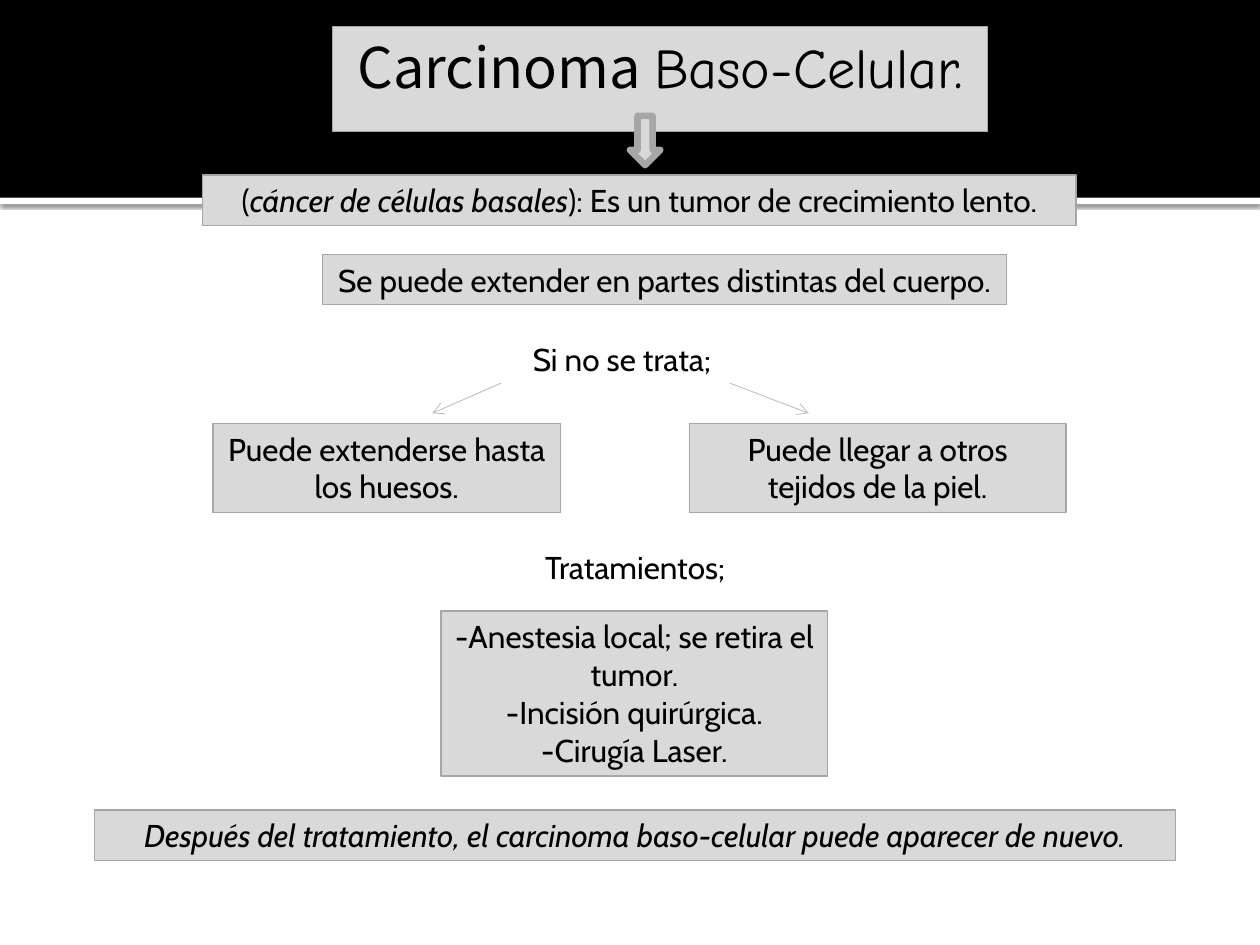
from dataclasses import dataclass

from lxml.etree import SubElement
from pptx import Presentation
from pptx.dml.color import RGBColor
from pptx.enum.shapes import MSO_CONNECTOR, MSO_SHAPE
from pptx.enum.text import MSO_ANCHOR, MSO_AUTO_SIZE, PP_ALIGN
from pptx.oxml.ns import qn
from pptx.util import Inches, Pt

BLACK = RGBColor(0x00, 0x00, 0x00)
WHITE = RGBColor(0xFF, 0xFF, 0xFF)
BOX_FILL = RGBColor(0xD9, 0xD9, 0xD9)
BOX_LINE = RGBColor(0xA6, 0xA6, 0xA6)
ARROW_LINE = RGBColor(0xBF, 0xBF, 0xBF)


@dataclass(frozen=True)
class Run:
    text: str
    italic: bool = False
    font: str = "Cabin"
    size: int = 18


@dataclass(frozen=True)
class Box:
    left: float
    top: float
    width: float
    height: float
    paragraphs: tuple[tuple[Run, ...], ...]
    filled: bool = True
    align: PP_ALIGN = PP_ALIGN.CENTER


@dataclass(frozen=True)
class Arrow:
    start: tuple[float, float]
    end: tuple[float, float]


TITLE = Box(2.64, 0.21, 5.2, 0.64, ((
    Run("Carcinoma ", font="Noto Sans CJK SC", size=32),
    Run("Baso-Celular.", font="Comic Neue", size=32),
),))
BOXES = [
    Box(1.61, 1.39, 6.93, 0.4, ((
        Run("("),
        Run("cáncer de células basales", italic=True),
        Run("): Es un tumor de crecimiento lento."),
    ),)),
    Box(2.56, 2.02, 5.43, 0.4,
        ((Run("Se puede extender en partes distintas del cuerpo."),),)),
    Box(4.13, 2.65, 1.65, 0.4, ((Run("Si no se trata;"),),),
        filled=False, align=PP_ALIGN.LEFT),
    Box(1.69, 3.36, 2.76, 0.71, ((Run("Puede extenderse hasta los huesos."),),)),
    Box(5.47, 3.36, 2.99, 0.71,
        ((Run("Puede llegar a otros tejidos de la piel."),),)),
    Box(3.27, 4.3, 3.54, 0.4, ((Run("Tratamientos;"),),), filled=False),
    Box(3.5, 4.85, 3.07, 1.31, (
        (Run("-Anestesia local; se retira el tumor."),),
        (Run("-Incisión quirúrgica."),),
        (Run("-Cirugía Laser."),),
    )),
    Box(0.75, 6.43, 8.58, 0.4, ((Run(
        "Después del tratamiento, el carcinoma baso-celular puede aparecer de nuevo.",
        italic=True),),)),
]
ARROWS = [Arrow((5.79, 3.04), (6.42, 3.28)), Arrow((3.98, 3.04), (3.43, 3.28))]


def paint(shape, fill: RGBColor, line: RGBColor | None = None,
          line_width: float = 0.75) -> None:
    shape.fill.solid()
    shape.fill.fore_color.rgb = fill
    if line is None:
        shape.line.fill.background()
    else:
        shape.line.color.rgb = line
        shape.line.width = Pt(line_width)


def write(shape, box: Box) -> None:
    frame = shape.text_frame
    settings = {
        "word_wrap": True,
        "auto_size": MSO_AUTO_SIZE.SHAPE_TO_FIT_TEXT,
        "vertical_anchor": MSO_ANCHOR.TOP,
        "margin_left": Inches(0.1),
        "margin_right": Inches(0.1),
        "margin_top": Inches(0.05),
        "margin_bottom": Inches(0.05),
    }
    for name, value in settings.items():
        setattr(frame, name, value)
    for index, runs in enumerate(box.paragraphs):
        paragraph = frame.add_paragraph() if index else frame.paragraphs[0]
        paragraph.alignment = box.align
        for item in runs:
            run = paragraph.add_run()
            run.text = item.text
            formats = {"name": item.font, "size": Pt(item.size), "italic": item.italic}
            for name, value in formats.items():
                setattr(run.font, name, value)
            run.font.color.rgb = BLACK


def add_preset(slide, kind: MSO_SHAPE, left: float, top: float,
               width: float, height: float):
    shape = slide.shapes.add_shape(
        kind, Inches(left), Inches(top), Inches(width), Inches(height))
    shape.shadow.inherit = False
    return shape


def add_box(slide, box: Box) -> None:
    place = (box.left, box.top, box.width, box.height)
    if box.filled:
        shape = add_preset(slide, MSO_SHAPE.RECTANGLE, *place)
        paint(shape, BOX_FILL, BOX_LINE)
    else:
        shape = slide.shapes.add_textbox(*map(Inches, place))
    write(shape, box)


def add_header(slide) -> None:
    """Add the black band and the shadowed white strip beneath it."""
    strip = add_preset(slide, MSO_SHAPE.RECTANGLE, 0, 1.57, 10, 0.05)
    paint(strip, WHITE)
    effects = strip.element.spPr.find(qn("a:effectLst"))
    shadow = SubElement(effects, qn("a:outerShdw"), blurRad=str(Pt(2.5)),
                        dist=str(Pt(0.8)), dir="5400000", rotWithShape="0")
    color = SubElement(shadow, qn("a:srgbClr"), val=str(BLACK))
    SubElement(color, qn("a:alpha"), val="60000")
    band = add_preset(slide, MSO_SHAPE.RECTANGLE, 0, 0, 10, 1.57)
    paint(band, BLACK)


def add_title(slide, box: Box) -> None:
    """Place the title placeholder in front of the header."""
    title = slide.shapes.title
    title.left, title.top = Inches(box.left), Inches(box.top)
    title.width, title.height = Inches(box.width), Inches(box.height)
    paint(title, BOX_FILL, BOX_LINE)
    write(title, box)
    title.element.getparent().append(title.element)


def add_arrow(slide, arrow: Arrow) -> None:
    connector = slide.shapes.add_connector(
        MSO_CONNECTOR.STRAIGHT, *map(Inches, arrow.start + arrow.end))
    connector.line.color.rgb = ARROW_LINE
    connector.line.width = Pt(0.5)
    properties = connector.element.spPr
    SubElement(properties.find(qn("a:ln")), qn("a:tailEnd"), type="arrow")
    SubElement(properties, qn("a:effectLst"))


def main() -> None:
    presentation = Presentation()
    presentation.slide_width = Inches(10)
    presentation.slide_height = Inches(7.5)
    slide = presentation.slides.add_slide(presentation.slide_layouts[5])
    add_header(slide)
    add_title(slide, TITLE)
    for box in BOXES:
        add_box(slide, box)
    down_arrow = add_preset(slide, MSO_SHAPE.DOWN_ARROW, 5, 0.92, 0.24, 0.39)
    paint(down_arrow, BOX_FILL, BOX_LINE, 3.78)
    for arrow in ARROWS:
        add_arrow(slide, arrow)
    presentation.save("out.pptx")


if __name__ == "__main__":
    main()
